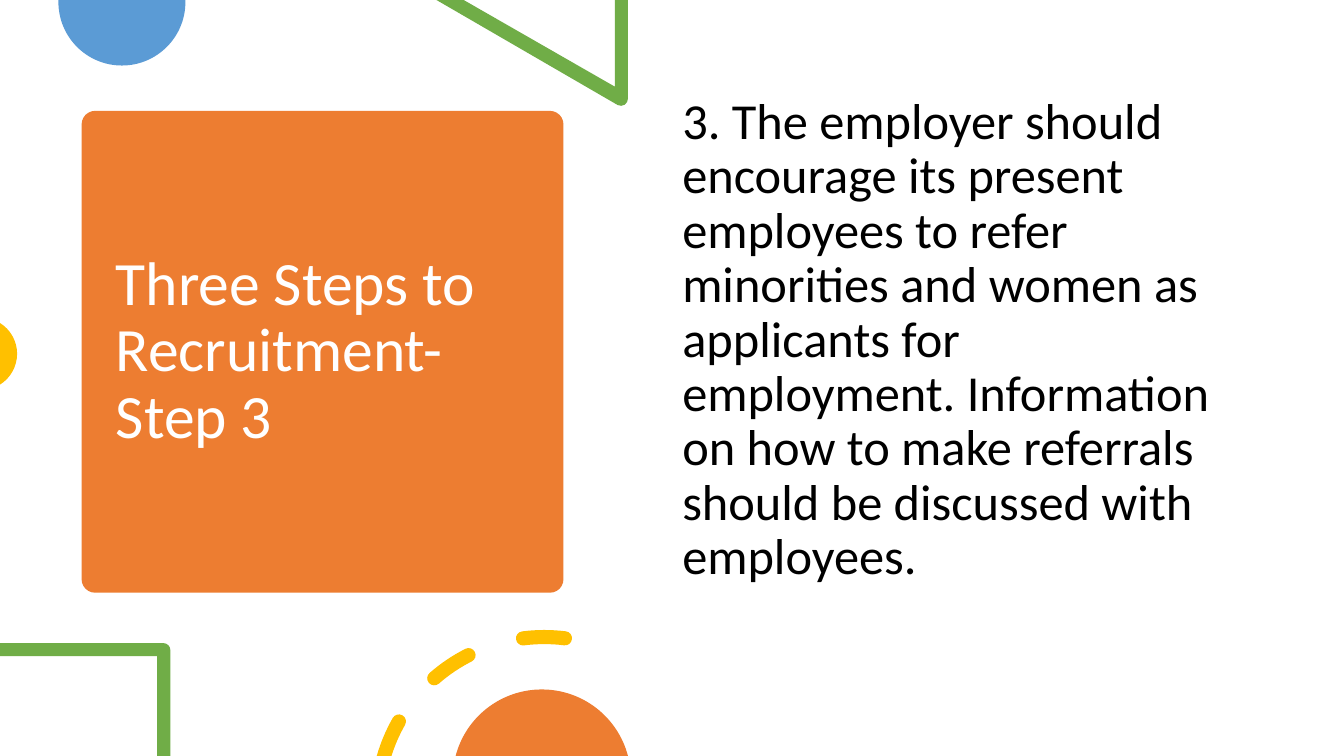
import math
from dataclasses import dataclass

import pptx
import pptx.dml.color
import pptx.enum.shapes
import pptx.enum.text
import pptx.oxml.ns
import pptx.util

Inches = pptx.util.Inches


@dataclass
class Box:
    left: float
    top: float
    width: float
    height: float


@dataclass(frozen=True)
class Theme:
    font: str = "Calibri"
    title_size: int = 44
    body_size: int = 36
    white: str = "FFFFFF"
    black: str = "000000"
    orange: str = "ED7D31"
    blue: str = "5B9BD5"
    green: str = "70AD47"
    yellow: str = "FFC000"


THEME = Theme()


def rgb(color):
    return pptx.dml.color.RGBColor.from_string(color)


def paint(shape, color):
    """Give a shape a flat fill with no line or shadow."""
    shape.shadow.inherit = False
    shape.fill.solid()
    shape.fill.fore_color.rgb = rgb(color)
    shape.line.fill.background()


def polar(x, y, radius, angle):
    """Point on a circle; angles in degrees clockwise from the top."""
    turn = math.radians(angle)
    return x + radius * math.sin(turn), y - radius * math.cos(turn)


def arc(x, y, radius, start, end):
    """A start point, then one curve of three points per quarter turn or less."""
    count = math.ceil(abs(end - start) / 91)
    step = (end - start) / count
    reach = 4 / 3 * math.tan(math.radians(step) / 4)
    # A handle lies on the tangent, so it is a longer radius at a wider angle
    far, lean = radius * math.hypot(1, reach), math.degrees(math.atan(reach))
    segments = [polar(x, y, radius, start)]
    for index in range(count):
        first, last = start + step * index, start + step * (index + 1)
        segments.append(polar(x, y, far, first + lean)
                        + polar(x, y, far, last - lean)
                        + polar(x, y, radius, last))
    return segments


def outline(page, box, contours, color):
    """Fill closed contours of points and curves, measured from the box corner."""
    builder = None
    curve_flags = []
    for contour in contours:
        kept = [contour[0]]
        for segment in contour[1:]:
            if len(segment) == 6 or math.dist(segment, kept[-1][-2:]) > 0.005:
                kept.append(segment)
        points = [(Inches(box.left + segment[i]), Inches(box.top + segment[i + 1]))
                  for segment in kept for i in range(0, len(segment), 2)]
        if builder is None:
            builder = page.shapes.build_freeform(*points[0], scale=1.0)
        else:
            builder.move_to(*points[0])
        builder.add_line_segments(points[1:], close=True)
        curve_flags += [len(segment) == 6 for segment in kept[1:]]
    shape = builder.convert_to_shape()
    paint(shape, color)

    # Join each curve's three line steps into one cubic curve
    steps = iter(list(shape.element.iter(pptx.oxml.ns.qn("a:lnTo"))))
    for is_curve in curve_flags:
        node = next(steps)
        if is_curve:
            node.tag = pptx.oxml.ns.qn("a:cubicBezTo")
            for extra in (next(steps), next(steps)):
                node.append(extra[0])
                extra.getparent().remove(extra)


def text_block(page, box, text, size, color, anchor):
    shape = page.shapes.add_textbox(Inches(box.left), Inches(box.top),
                                    Inches(box.width), Inches(box.height))
    frame = shape.text_frame
    frame.text = text
    frame.word_wrap = True
    frame.vertical_anchor = anchor
    para = frame.paragraphs[0]
    para.line_spacing = 0.9
    span = para.runs[0]
    span.font.name = THEME.font
    span.font.size = pptx.util.Pt(size)
    span.font.color.rgb = rgb(color)
    return para


def title_card(page, box):
    card = page.shapes.add_shape(
        pptx.enum.shapes.MSO_SHAPE.ROUNDED_RECTANGLE,
        Inches(box.left), Inches(box.top), Inches(box.width), Inches(box.height))
    card.adjustments[0] = 0.028
    paint(card, THEME.orange)
    inner = Box(box.left + 0.24, box.top + 0.11, box.width - 0.47, box.height - 0.22)
    text_block(page, inner, "Three Steps to Recruitment-Step 3", THEME.title_size,
               THEME.white, pptx.enum.text.MSO_ANCHOR.MIDDLE)


def body(page, box):
    para = text_block(
        page, box,
        "3. The employer should encourage its present employees to refer "
        "minorities and women as applicants for employment. Information on "
        "how to make referrals should be discussed with employees. ",
        THEME.body_size, THEME.black, pptx.enum.text.MSO_ANCHOR.TOP)
    para.space_before = pptx.util.Pt(10)


def blue_disc(page, box):
    radius = box.width / 2
    lower_half = arc(radius, box.height - radius, radius, 90, 270)
    outline(page, box, [[(0, 0), (box.width, 0)] + lower_half], THEME.blue)


def green_triangle(page, box):
    right = box.width
    tip = arc(right - 0.07, box.height - 0.07, 0.07, 207, 90)
    edge = [(right, 0), (right - 0.13, 0), (right - 0.13, 0.86), (0.27, 0), (0, 0)]
    outline(page, box, [edge + tip], THEME.green)


def yellow_disc(page, box):
    radius = 0.36
    half_angle = math.degrees(math.acos(1 - box.width / radius))
    edge = arc(box.width - radius, box.height / 2, radius,
               90 - half_angle, 90 + half_angle)
    outline(page, box, [edge], THEME.yellow)


def green_corner(page, box):
    right, bottom, band = box.width, box.height, 0.13
    turn = arc(right - 0.07, 0.07, 0.07, 0, 90)
    inside = [(right, bottom), (right - band, bottom), (right - band, band),
              (0, band), (0, 0)]
    outline(page, box, [turn + inside], THEME.green)


def dashed_ring(page, box):
    x, y, radius, half = 1.66, 1.73, 1.66, 0.07

    def cap(angle, turn):
        return arc(*polar(x, y, radius, angle), half, angle + turn, angle + turn + 180)

    def dash(outer_start, inner_start, end):
        return (arc(x, y, radius + half, outer_start, end) + cap(end, 0)
                + arc(x, y, radius - half, end, inner_start))

    # The first dash is cut by the slide edge; the others are round at both ends
    contours = [dash(-73.9, -72.4, -60.3)]
    for start, end in ((-41.1, -26.9), (-7.3, 7.1)):
        contours.append(dash(start, start, end) + cap(start, 180))
    outline(page, box, contours, THEME.yellow)


def orange_disc(page, box):
    half = box.width / 2
    radius = (half ** 2 + box.height ** 2) / (2 * box.height)
    angle = math.degrees(math.asin(half / radius))
    outline(page, box, [arc(half, radius, radius, -angle, angle)], THEME.orange)


def main():
    deck = pptx.Presentation()
    deck.slide_width, deck.slide_height = Inches(40 / 3), Inches(7.5)
    page = deck.slides.add_slide(deck.slide_layouts[6])

    # Title card and the decorations above and beside it
    title_card(page, Box(0.81, 1.1, 4.78, 4.78))
    blue_disc(page, Box(0.58, 0, 1.26, 0.65))
    green_triangle(page, Box(4.33, 0, 1.9, 1.05))
    yellow_disc(page, Box(0, 3.21, 0.17, 0.6))

    # Main text
    body(page, Box(6.67, 0.9, 5.75, 5.35))

    # Decorations along the bottom edge
    green_corner(page, Box(0, 6.38, 1.69, 1.12))
    dashed_ring(page, Box(3.74, 6.25, 1.94, 1.25))
    orange_disc(page, Box(4.52, 6.84, 1.71, 0.66))

    deck.save("out.pptx")


if __name__ == "__main__":
    main()
